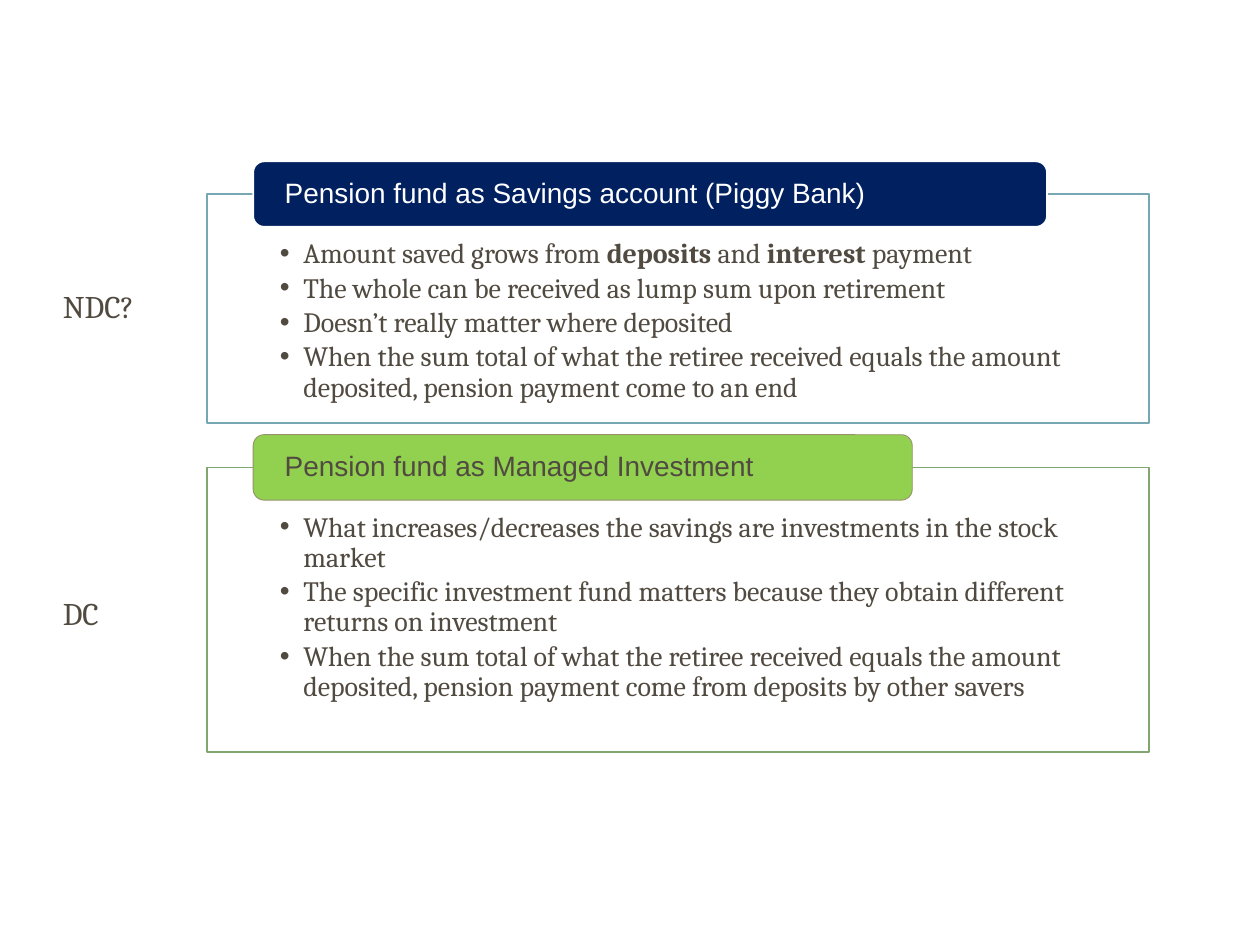
from dataclasses import dataclass
from typing import Any

from pptx import Presentation
from pptx.dml.color import RGBColor as Rgb
from pptx.enum.shapes import MSO_SHAPE as Kind
from pptx.enum.text import MSO_ANCHOR as Anchor, MSO_AUTO_SIZE as Fit
from pptx.oxml.xmlchemy import OxmlElement as Node
from pptx.util import Pt


@dataclass(frozen=True)
class Theme:
    ink: str = "514A40"
    white: str = "FFFFFF"
    navy: str = "002060"
    lime: str = "92D050"
    olive: str = "98916E"
    blue: str = "76A7B2"
    green: str = "82A670"
    serif: str = "Cambria"
    sans: str = "Arial"
    size: float = 16
    big: float = 18


@dataclass(frozen=True)
class Tab:
    text: str
    width: float
    fill: str
    line: str
    weight: float
    ink: str


@dataclass(frozen=True)
class Label:
    text: str
    top: float
    width: float


@dataclass(frozen=True)
class Panel:
    top: float
    height: float
    line: str
    tab: Tab
    label: Label
    items: tuple[str, ...]


THEME = Theme()
LEFT, WIDTH = 118.1, 538.6
TAB_LEFT, TAB_HIGH = 144.7, 37.4
LABEL_LEFT, LABEL_HIGH = 28.8, 28.8
INDENT = 13.5

PANELS = (
    Panel(
        110.9, 131, THEME.blue,
        Tab("Pension fund as Savings account (Piggy Bank)", 453.6,
            THEME.navy, THEME.white, 1, THEME.white),
        Label("NDC?", 160.6, 56.9),
        ("Amount saved grows from *deposits* and *interest* payment",
         "The whole can be received as lump sum upon retirement",
         "Doesn’t really matter where deposited",
         "When the sum total of what the retiree received equals the amount "
         "deposited, pension payment come to an end"),
    ),
    Panel(
        267.1, 162.7, THEME.green,
        Tab("Pension fund as Managed Investment", 376.6,
            THEME.lime, THEME.olive, 0.5, THEME.ink),
        Label("DC", 336.2, 36.7),
        ("What increases/decreases the savings are investments in the stock market",
         "The specific investment fund matters because they obtain different "
         "returns on investment",
         "When the sum total of what the retiree received equals the amount "
         "deposited, pension payment come from deposits by other savers"),
    ),
)


def apply(obj: Any, style: dict[str, Any]) -> None:
    for name, value in style.items():
        setattr(obj, name, value)


def place(shape: Any, left: float, top: float, width: float, height: float) -> None:
    apply(shape, {"left": Pt(left), "top": Pt(top),
                  "width": Pt(width), "height": Pt(height)})


def paint(shape: Any, fill: str, line: str, weight: float) -> None:
    shape.fill.solid()
    shape.fill.fore_color.rgb = Rgb.from_string(fill)
    shape.line.color.rgb = Rgb.from_string(line)
    shape.line.width = Pt(weight)


def pad(frame: Any, side: float, top: float, bottom: float) -> None:
    apply(frame, {"margin_left": Pt(side), "margin_right": Pt(side),
                  "margin_top": Pt(top), "margin_bottom": Pt(bottom)})


def style_font(font: Any, name: str, size: float, ink: str) -> None:
    apply(font, {"name": name, "size": Pt(size)})
    font.color.rgb = Rgb.from_string(ink)


def add_item(para: Any, text: str) -> None:
    """Fill a bullet paragraph; text between asterisks is bold."""
    para.level = 1
    props = para._p.get_or_add_pPr()
    props.set("marL", str(Pt(INDENT)))
    props.set("indent", str(-Pt(INDENT)))
    mark = Node("a:buChar")
    mark.set("char", "•")
    props.append(mark)
    apply(para, {"line_spacing": 0.9, "space_before": Pt(0), "space_after": Pt(2.4)})
    for spot, part in enumerate(text.split("*")):
        run = para.add_run()
        run.text = part
        style_font(run.font, THEME.serif, THEME.size, THEME.ink)
        run.font.bold = spot % 2 == 1


def fill_list(body: Any, panel: Panel) -> None:
    place(body, LEFT, panel.top, WIDTH, panel.height)
    paint(body, THEME.white, panel.line, 1)
    frame = body.text_frame
    apply(frame, {"word_wrap": True, "auto_size": Fit.NONE,
                  "vertical_anchor": Anchor.TOP})
    pad(frame, 41.8, 26, 8.5)
    for spot, text in enumerate(panel.items):
        add_item(frame.add_paragraph() if spot else frame.paragraphs[0], text)


def add_tab(slide: Any, panel: Panel) -> None:
    """Draw the heading centred on the panel's top edge."""
    tab = panel.tab
    shape = slide.shapes.add_shape(
        Kind.ROUNDED_RECTANGLE, Pt(TAB_LEFT), Pt(panel.top - TAB_HIGH / 2),
        Pt(tab.width), Pt(TAB_HIGH))
    shape.shadow.inherit = False
    paint(shape, tab.fill, tab.line, tab.weight)
    frame = shape.text_frame
    apply(frame, {"word_wrap": True, "vertical_anchor": Anchor.MIDDLE})
    pad(frame, 16.2, 0, 0)
    para = frame.paragraphs[0]
    para.text = tab.text
    apply(para, {"alignment": 1, "line_spacing": 0.9})
    style_font(para.runs[0].font, THEME.sans, THEME.size, tab.ink)


def add_label(slide: Any, label: Label) -> None:
    box = slide.shapes.add_textbox(
        Pt(LABEL_LEFT), Pt(label.top), Pt(label.width), Pt(LABEL_HIGH))
    frame = box.text_frame
    apply(frame, {"word_wrap": False, "auto_size": Fit.SHAPE_TO_FIT_TEXT})
    frame.text = label.text
    style_font(frame.paragraphs[0].runs[0].font, THEME.serif, THEME.big, THEME.ink)


def main() -> None:
    deck = Presentation()
    apply(deck, {"slide_width": Pt(720), "slide_height": Pt(540)})
    slide = deck.slides.add_slide(deck.slide_layouts.get_by_name("Two Content"))
    title, *bodies = slide.placeholders
    title.element.getparent().remove(title.element)
    for body, panel in zip(bodies, PANELS):
        fill_list(body, panel)
        add_tab(slide, panel)
        add_label(slide, panel.label)
    deck.save("out.pptx")


if __name__ == "__main__":
    main()
